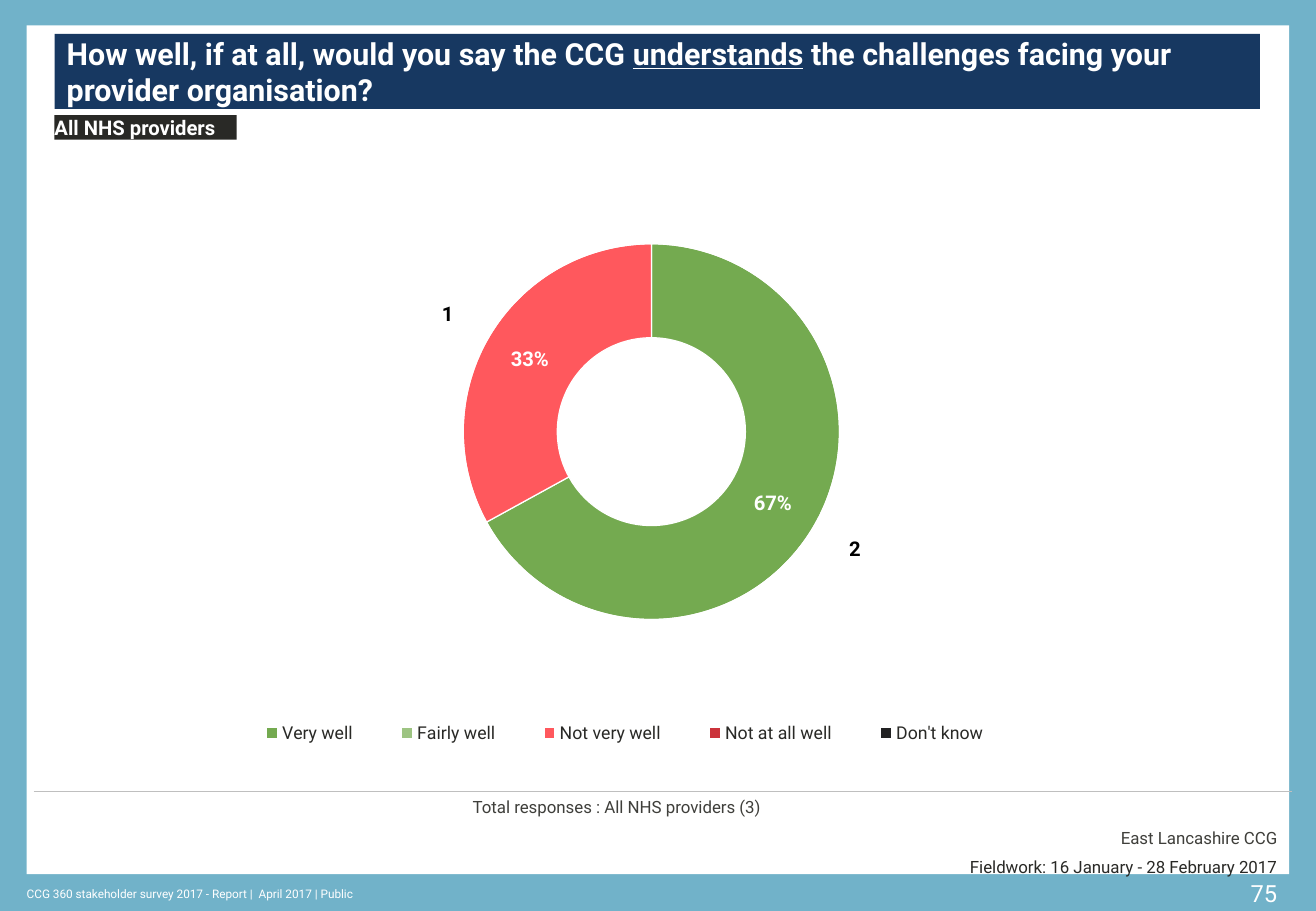
from lxml.etree import SubElement
from pptx import Presentation
from pptx.chart.data import CategoryChartData
from pptx.dml.color import RGBColor
from pptx.enum.chart import XL_CHART_TYPE, XL_LEGEND_POSITION
from pptx.enum.shapes import MSO_CONNECTOR, MSO_SHAPE
from pptx.enum.text import MSO_ANCHOR, MSO_AUTO_SIZE, PP_ALIGN
from pptx.oxml import parse_xml
from pptx.oxml.ns import nsdecls, qn
from pptx.util import Cm, Pt

FONT = "Roboto"
WHITE, DARK, GREY = "FFFFFF", "292926", "3F3F3B"
ANSWERS = {
    "Very well": "74AA50",
    "Fairly well": "9DC482",
    "Not very well": "FF585D",
    "Not at all well": "CB333B",
    "Don't know": "222223",
}
PERCENTAGES = (67, 0, 33, 0, 0)
COUNTS = (2, 0, 1, 0, 0)


def color(value):
    """Turn a hex string into a colour."""
    return RGBColor.from_string(value)


def paint(target, value):
    """Fill a shape or background with one colour."""
    target.fill.solid()
    target.fill.fore_color.rgb = color(value)


def style(font, size, value, bold=False):
    """Set the typeface, size, colour and weight of a font."""
    font.name, font.size, font.bold = FONT, Pt(size), bold
    font.color.rgb = color(value)


def add_block(page, box, value):
    """Add a filled rectangle without outline."""
    block = page.shapes.add_shape(MSO_SHAPE.RECTANGLE, *map(Cm, box))
    block.shadow.inherit = False
    paint(block, value)
    block.line.fill.background()
    return block


def write(shape, lines, size, value, aligns, bold=False, inset=True, wrap=True):
    """Write one paragraph per line, each with its own alignment."""
    frame = shape.text_frame
    frame.word_wrap = wrap
    frame.vertical_anchor = MSO_ANCHOR.TOP
    if not inset:
        frame.margin_left = frame.margin_right = 0
        frame.margin_top = frame.margin_bottom = 0
    frame.text = "\n".join(lines)
    for index, (para, align) in enumerate(zip(frame.paragraphs, aligns)):
        para.alignment = align
        if index:
            para.space_before = Pt(6)
        style(para.font, size, value, bold)
    return frame


def add_text(page, box, *args, **options):
    """Add a text box and write into it."""
    return write(page.shapes.add_textbox(*map(Cm, box)), *args, **options)


def add_rule(page, left, top, width):
    """Add the thin line above the footnotes."""
    ends = map(Cm, (left, top, left + width, top))
    rule = page.shapes.add_connector(MSO_CONNECTOR.STRAIGHT, *ends)
    rule.line.color.rgb = color("BFBFBF")
    rule.line.width = Pt(0.25)
    SubElement(rule._element.spPr, qn("a:effectLst"))


def add_title(page, box):
    """Place the question in the title bar, in front of the panel."""
    title = page.shapes.title
    title.left, title.top, title.width, title.height = map(Cm, box)
    paint(title, "173861")
    frame = title.text_frame
    frame.auto_size = MSO_AUTO_SIZE.NONE
    frame.vertical_anchor = MSO_ANCHOR.MIDDLE
    para = frame.paragraphs[0]
    para.alignment = PP_ALIGN.LEFT
    para.line_spacing = 1.0
    style(para.font, 18, WHITE, True)
    for words in ("How well, if at all, would you say the CCG ", "understands",
                  " the challenges facing your provider organisation?"):
        span = para.add_run()
        span.text = words
        span.font.underline = words == "understands"
    title._element.getparent().append(title._element)


def place_part(part, index, fractions, target=""):
    """Give a chart part a fixed place within the chart."""
    for layout in part.findall(qn("c:layout")):
        part.remove(layout)
    sizes = "".join(f'<c:{name} val="{value}"/>' for name, value in zip("xywh", fractions))
    part.insert(index, parse_xml(
        f'<c:layout {nsdecls("c")}><c:manualLayout>{target}'
        f'<c:xMode val="edge"/><c:yMode val="edge"/>{sizes}'
        "</c:manualLayout></c:layout>"))


def style_ring(series, fills, label_color, number_format):
    """Colour the slices of a ring and label those above zero."""
    for index, fill in enumerate(fills):
        slice_format = series.points[index].format
        if fill:
            paint(slice_format, fill)
        else:
            slice_format.fill.background()
        slice_format.line.color.rgb = color(WHITE)
        slice_format.line.width = Pt(0.75)
    labels = series.data_labels
    labels.show_value = True
    labels.number_format = number_format
    labels.number_format_is_linked = False
    style(labels.font, 12, label_color, True)


def add_ring_chart(page, box):
    """Add the doughnut of percentages with an unfilled ring of counts."""
    data = CategoryChartData()
    data.categories = list(ANSWERS)
    data.add_series("Series 1", PERCENTAGES)
    data.add_series("Series 2", COUNTS)
    chart = page.shapes.add_chart(XL_CHART_TYPE.DOUGHNUT, *map(Cm, box), data).chart
    chart.has_title = False
    style(chart.font, 18, DARK)
    plot = chart.plots[0]
    plot.vary_by_categories = True
    plot._element.find(qn("c:holeSize")).set("val", "38")
    percentages, counts = plot.series
    style_ring(percentages, ANSWERS.values(), WHITE, '0"%";;')
    style_ring(counts, [None] * len(ANSWERS), "000000", "0;;")
    chart.has_legend = True
    legend = chart.legend
    legend.position = XL_LEGEND_POSITION.BOTTOM
    legend.include_in_layout = False
    style(legend.font, 10.5, DARK)
    place_part(legend._element, 1, (0.17, 0.88, 0.61, 0.06))
    place_part(plot._element.getparent(), 0, (0.28, 0, 0.43, 0.88),
               '<c:layoutTarget val="inner"/>')


def add_frame(page, box):
    """Add the white panel with the footer and page number below it."""
    left, top, width, height = box
    bottom = top + height
    add_block(page, box, WHITE)
    add_text(page, (left + width - 1.12, bottom - 0.02, 1.12, 0.86), ["75"], 14, WHITE,
             [PP_ALIGN.RIGHT], wrap=False)
    footer = add_text(page, (left, bottom + 0.16, 13.59, 0.51),
                      ["CCG 360 stakeholder survey 2017 - Report |  April 2017 | Public"],
                      7, WHITE, [PP_ALIGN.LEFT], inset=False)
    footer.vertical_anchor = MSO_ANCHOR.MIDDLE


def add_notes(page, box):
    """Add the rule, the base sizes and the fieldwork dates."""
    left, top, width, height = box
    add_rule(page, left, top, width)
    add_text(page, (left + 8.92, top, 17.32, 0.97),
             ["Total responses : All NHS providers (3)", "East Lancashire CCG"],
             10, GREY, [PP_ALIGN.LEFT, PP_ALIGN.RIGHT])
    add_text(page, (left + 18.64, top + height - 0.43, 7.34, 0.43),
             ["Fieldwork: 16 January - 28 February 2017"], 10, DARK,
             [PP_ALIGN.RIGHT], inset=False)


def main():
    """Build the slide and save it."""
    deck = Presentation()
    deck.slide_width, deck.slide_height = Cm(27.51), Cm(19.05)
    page = deck.slides.add_slide(deck.slide_layouts[5])
    paint(page.background, "71B2C9")
    add_frame(page, (0.56, 0.53, 26.39, 17.75))
    add_ring_chart(page, (0, 3.12, 27.51, 13.41))
    add_title(page, (1.14, 0.71, 25.2, 1.57))
    tag = add_block(page, (1.14, 2.41, 3.81, 0.51), DARK)
    write(tag, ["All NHS providers"], 12, WHITE, [PP_ALIGN.LEFT], bold=True, inset=False)
    add_notes(page, (0.71, 16.54, 26.29, 1.8))
    deck.save("out.pptx")


if __name__ == "__main__":
    main()
